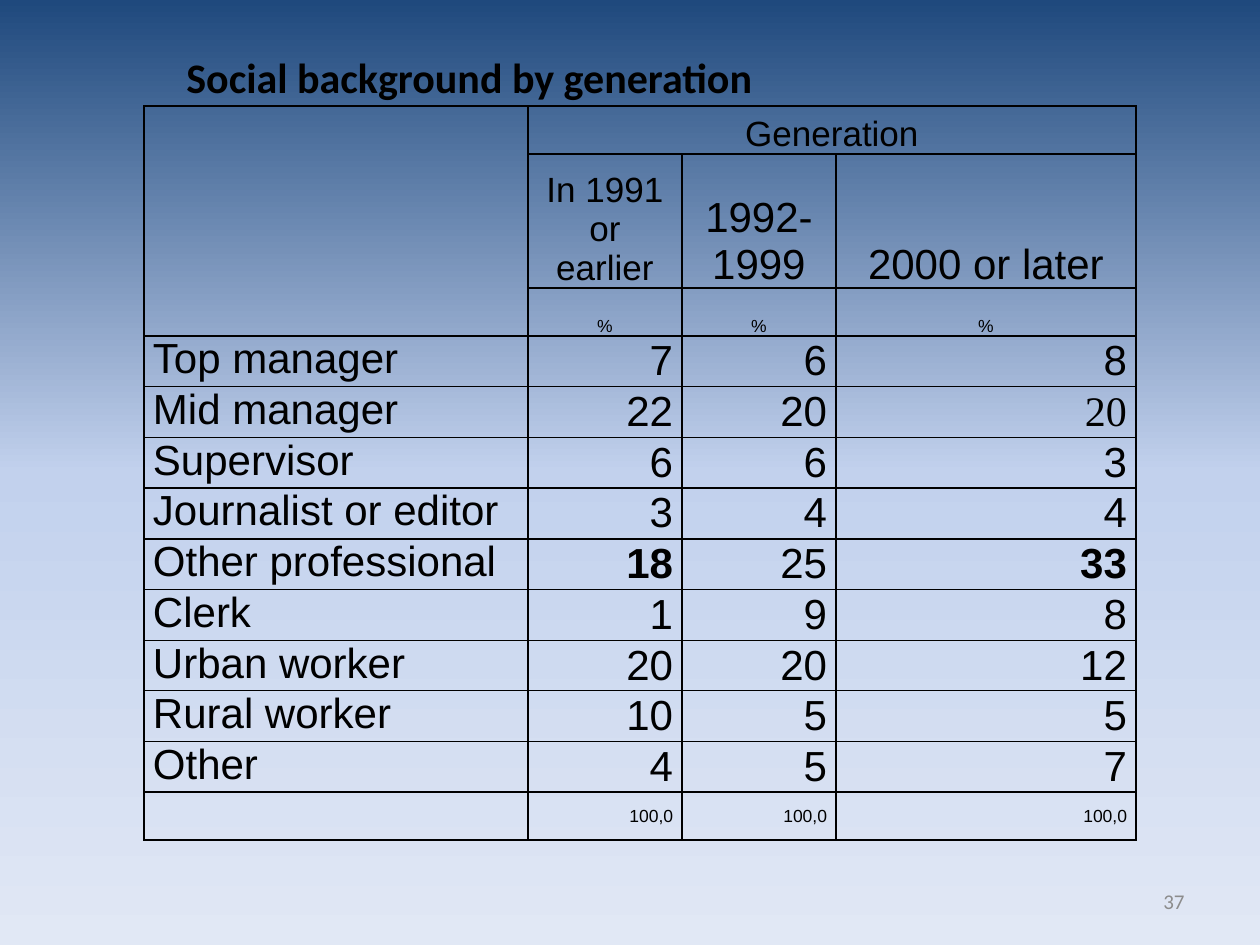
import copy

import pptx
import pptx.dml.color
import pptx.enum.text
import pptx.oxml
import pptx.oxml.ns
import pptx.util

RGB = pptx.dml.color.RGBColor
ALIGN = pptx.enum.text.PP_ALIGN
ANCHOR = pptx.enum.text.MSO_ANCHOR

BLACK = RGB(0, 0, 0)
GREY = RGB(0x8C, 0x8C, 0x8C)
SKY = [(0, RGB(0x1F, 0x49, 0x7D)), (0.5, RGB(0xC2, 0xD1, 0xED)), (1, RGB(0xE1, 0xE8, 0xF5))]

HEADINGS = ["In 1991 or earlier", "1992-1999", "2000 or later"]
SHARES = [
    ("Top manager", 7, 6, 8),
    ("Mid manager", 22, 20, 20),
    ("Supervisor", 6, 6, 3),
    ("Journalist or editor", 3, 4, 4),
    ("Other professional", 18, 25, 33),
    ("Clerk", 1, 9, 8),
    ("Urban worker", 20, 20, 12),
    ("Rural worker", 10, 5, 5),
    ("Other", 4, 5, 7),
]
FIRST = 3  # first row of shares, below the three heading rows
BOLD = {(7, 1), (7, 3)}
SERIF = {(4, 3)}


def px(n):
    return pptx.util.Emu(round(n * 914400 / 126))


class Deck:
    def __init__(self, width, height):
        self.prs = pptx.Presentation()
        self.prs.slide_width, self.prs.slide_height = px(width), px(height)
        self.s = self.prs.slides.add_slide(self.prs.slide_layouts[6])

    def background(self, stops):
        """Fill the slide from top to bottom with the given (position, colour) stops."""
        fill = self.s.background.fill
        fill.gradient()
        fill.gradient_angle = 270
        gs_list = self.s.element.find(".//" + pptx.oxml.ns.qn("a:gsLst"))
        while len(gs_list) < len(stops):
            gs_list.append(copy.deepcopy(gs_list[0]))
        for stop, (position, color) in zip(fill.gradient_stops, stops):
            stop.position = position
            stop.color.rgb = color

    def add_run(self, tf, text, size, font="Arial", color=BLACK, bold=False, align=ALIGN.LEFT):
        p = tf.paragraphs[0]
        p.alignment = align
        r = p.add_run()
        r.text = text
        r.font.color.rgb = color
        for name, value in {"name": font, "size": pptx.util.Pt(size), "bold": bold}.items():
            setattr(r.font, name, value)

    def text(self, box, text, size, anchor=ANCHOR.TOP, **style):
        tf = self.s.shapes.add_textbox(*map(px, box)).text_frame
        tf.word_wrap = True
        tf.vertical_anchor = anchor
        self.add_run(tf, text, size, **style)

    def table(self, left, top, widths, heights):
        """Add an unfilled table with black borders."""
        frame = self.s.shapes.add_table(len(heights), len(widths), px(left), px(top),
                                        px(sum(widths)), px(sum(heights)))
        table = frame.table
        table.first_row = table.horz_banding = False
        for column, width in zip(table.columns, widths):
            column.width = px(width)
        for row, height in zip(table.rows, heights):
            row.height = px(height)
        for cell in table.iter_cells():
            margins = {"margin_left": px(9), "margin_right": px(9),
                       "margin_top": 0, "margin_bottom": 0}
            for name, value in margins.items():
                setattr(cell, name, value)
            cell.fill.background()
            self.border(cell)
            cell.text_frame.paragraphs[0].font.size = pptx.util.Pt(10)
        return table

    def border(self, cell):
        tc_pr = cell._tc.get_or_add_tcPr()
        for i, side in enumerate("LRTB"):
            tc_pr.insert(i, pptx.oxml.parse_xml(
                f'<a:ln{side} {pptx.oxml.ns.nsdecls("a")} w="12700"><a:solidFill>'
                f'<a:srgbClr val="{BLACK}"/></a:solidFill></a:ln{side}>'))

    def cell(self, table, row, col, text, size, anchor, **style):
        cell = table.cell(row, col)
        cell.vertical_anchor = anchor
        self.add_run(cell.text_frame, text, size, **style)


def main():
    deck = Deck(1260, 945)
    deck.background(SKY)
    deck.text((903, 876, 294, 50), "37", 12, ANCHOR.MIDDLE,
              font="Calibri", color=GREY, align=ALIGN.RIGHT)

    edges = [round(i * 454 / len(SHARES)) for i in range(len(SHARES) + 1)]
    share_heights = [b - a for a, b in zip(edges, edges[1:])]
    table = deck.table(144, 106, [384, 154, 154, 300], [48, 134, 48, *share_heights, 48])
    table.cell(0, 0).merge(table.cell(2, 0))
    table.cell(0, 1).merge(table.cell(0, 3))

    heading = {"anchor": ANCHOR.BOTTOM, "align": ALIGN.CENTER}
    number = {"anchor": ANCHOR.MIDDLE, "align": ALIGN.RIGHT}
    deck.cell(table, 0, 1, "Generation", 20, **heading)
    for col, label in enumerate(HEADINGS, 1):
        deck.cell(table, 1, col, label, 20 if col == 1 else 24, **heading)
        deck.cell(table, 2, col, "%", 10, **heading)
        deck.cell(table, FIRST + len(SHARES), col, "100,0", 10, **number)
    for row, (label, *values) in enumerate(SHARES, FIRST):
        deck.cell(table, row, 0, label, 24, ANCHOR.TOP)
        for col, value in enumerate(values, 1):
            font = "Times New Roman" if (row, col) in SERIF else "Arial"
            deck.cell(table, row, col, str(value), 24, font=font,
                      bold=(row, col) in BOLD, **number)

    deck.text((174, 45, 893, 63), "Social background by generation", 24,
              font="Calibri", bold=True)
    deck.prs.save("out.pptx")


if __name__ == "__main__":
    main()
